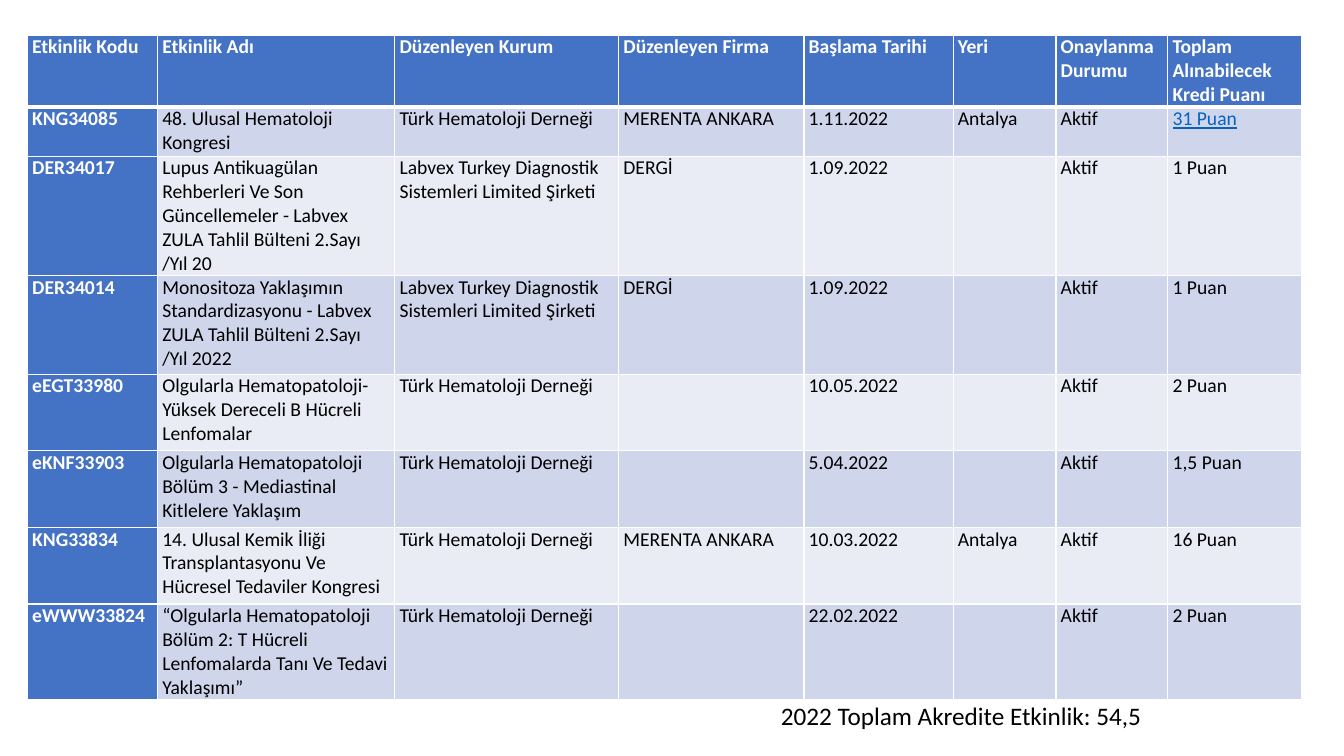
"""Build a slide that lists the accredited events of 2022."""
from lxml import etree
from pptx import Presentation
from pptx.dml.color import RGBColor
from pptx.oxml.ns import qn
from pptx.util import Cm, Pt

BLUE, WHITE, BLACK, LINK = "4472C4", "FFFFFF", "000000", "0563C1"
BANDS = ("CFD5EA", "E9EBF5")
SOCIETY = "Türk Hematoloji Derneği"
LAB_COMPANY = "Labvex Turkey Diagnostik Sistemleri Limited Şirketi"
MAGAZINE = "Labvex ZULA Tahlil Bülteni"
ORGANISER = "MERENTA ANKARA"
COLUMNS = {
    "Etkinlik Kodu": 3.28,
    "Etkinlik Adı": 5.98,
    "Düzenleyen Kurum": 5.64,
    "Düzenleyen Firma": 4.67,
    "Başlama Tarihi": 3.76,
    "Yeri": 2.59,
    "Onaylanma Durumu": 2.82,
    "Toplam Alınabilecek Kredi Puanı": 3.38,
}
EVENTS = [
    ("KNG34085", "48. Ulusal Hematoloji Kongresi",
     SOCIETY, ORGANISER, "1.11.2022", "Antalya", "Aktif", "31 Puan"),
    ("DER34017", "Lupus Antikuagülan Rehberleri Ve Son Güncellemeler - "
     f"{MAGAZINE} 2.Sayı /Yıl 20",
     LAB_COMPANY, "DERGİ", "1.09.2022", "", "Aktif", "1 Puan"),
    ("DER34014", "Monositoza Yaklaşımın Standardizasyonu - "
     f"{MAGAZINE} 2.Sayı /Yıl 2022",
     LAB_COMPANY, "DERGİ", "1.09.2022", "", "Aktif", "1 Puan"),
    ("eEGT33980", "Olgularla Hematopatoloji- Yüksek Dereceli B Hücreli Lenfomalar",
     SOCIETY, "", "10.05.2022", "", "Aktif", "2 Puan"),
    ("eKNF33903", "Olgularla Hematopatoloji Bölüm 3 - Mediastinal Kitlelere Yaklaşım",
     SOCIETY, "", "5.04.2022", "", "Aktif", "1,5 Puan"),
    ("KNG33834", "14. Ulusal Kemik İliği Transplantasyonu Ve Hücresel Tedaviler Kongresi",
     SOCIETY, ORGANISER, "10.03.2022", "Antalya", "Aktif", "16 Puan"),
    ("eWWW33824", "“Olgularla Hematopatoloji Bölüm 2: T Hücreli Lenfomalarda "
     "Tanı Ve Tedavi Yaklaşımı”",
     SOCIETY, "", "22.02.2022", "", "Aktif", "2 Puan"),
]
ROW_HEIGHTS = (1.5, 1.24, 3, 2.49, 1.93, 1.93, 1.93, 2.24)


def rgb(value):
    return RGBColor.from_string(value)


def write(frame, text, size=14, color=BLACK, bold=False, underline=False):
    frame.word_wrap = True
    if not text:
        return
    run = frame.paragraphs[0].add_run()
    run.text = text
    font = run.font
    font.name, font.size = "Calibri", Pt(size)
    font.bold, font.underline = bold, underline
    font.color.rgb = rgb(color)


class EventSlide:
    def __init__(self, slide, padding=0.12):
        self.slide = slide
        self.padding = Cm(padding)

    def borders(self, cell, **widths):
        properties = cell._tc.get_or_add_tcPr()
        for place, side in enumerate("LRTB"):
            line = etree.Element(qn(f"a:ln{side}"), w=str(Pt(widths.get(side, 1))))
            fill = etree.SubElement(line, qn("a:solidFill"))
            etree.SubElement(fill, qn("a:srgbClr"), val=WHITE)
            properties.insert(place, line)

    def cell(self, cell, text, fill, **style):
        cell.margin_left = cell.margin_right = self.padding
        cell.margin_top = cell.margin_bottom = 0
        cell.fill.solid()
        cell.fill.fore_color.rgb = rgb(fill)
        write(cell.text_frame, text, **style)

    def table(self, left, top, columns, heights, records):
        rows = [tuple(columns), *records]
        table = self.slide.shapes.add_table(
            len(rows), len(columns), Cm(left), Cm(top),
            Cm(sum(columns.values())), Cm(sum(heights))).table
        table.first_row = table.horz_banding = False
        for column, width in zip(table.columns, columns.values()):
            column.width = Cm(width)
        for r, (record, height) in enumerate(zip(rows, heights)):
            table.rows[r].height = Cm(height)
            for c, text in enumerate(record):
                cell = table.cell(r, c)
                if r == 0 or c == 0:
                    self.cell(cell, text, BLUE, color=WHITE, bold=True)
                else:
                    linked = text == "31 Puan"
                    self.cell(cell, text, BANDS[(r - 1) % 2],
                              color=LINK if linked else BLACK, underline=linked)
                self.borders(cell, T=3 if r == 1 else 1, B=3 if r == 0 else 1)

    def text(self, left, top, width, height, text, **style):
        box = self.slide.shapes.add_textbox(Cm(left), Cm(top), Cm(width), Cm(height))
        write(box.text_frame, text, **style)


def main():
    deck = Presentation()
    deck.slide_width, deck.slide_height = Cm(33.87), Cm(19.05)
    page = EventSlide(deck.slides.add_slide(deck.slide_layouts[6]))
    page.table(0.69, 0.89, COLUMNS, ROW_HEIGHTS, EVENTS)
    page.text(19.43, 17.53, 9.7, 1.02, "2022 Toplam Akredite Etkinlik: 54,5", size=18)
    deck.save("out.pptx")


if __name__ == "__main__":
    main()
